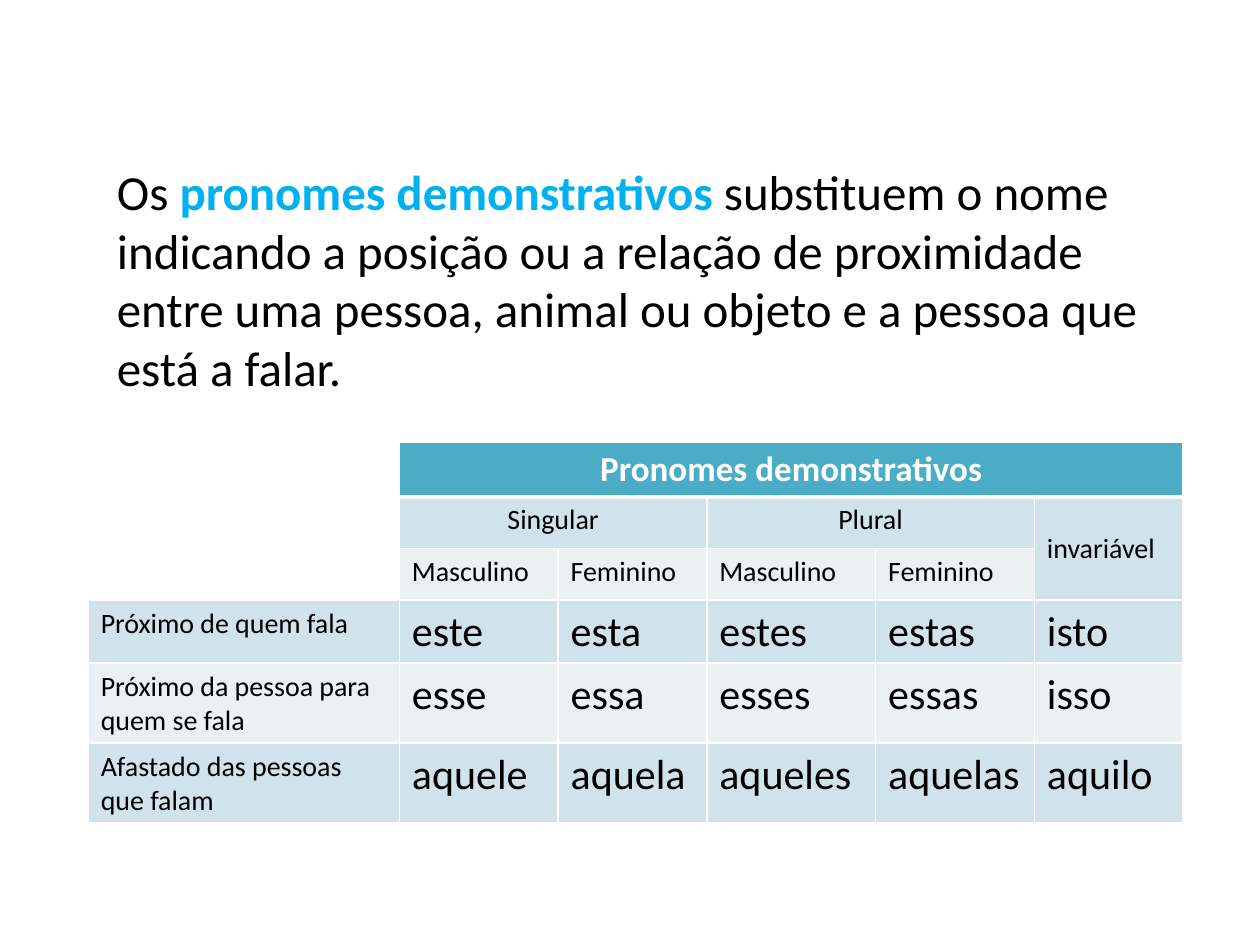
from pptx import Presentation
from pptx.dml.color import RGBColor
from pptx.enum import text
from pptx.oxml import parse_xml
from pptx.oxml import ns
from pptx.util import Inches, Pt

COLORS = {
    "ink": "000000",
    "accent": "00B0F0",
    "header": "4BACC6",
    "dark_band": "D0E3EA",
    "light_band": "E9F1F5",
    "white": "FFFFFF",
}
FONT = "Calibri"
COLUMN_WIDTHS = [2.47, 1.26, 1.18, 1.34, 1.26, 1.18]
ROW_HEIGHTS = [0.43, 0.41, 0.41, 0.5, 0.63, 0.63]
HEADINGS = [
    (0, 1, 0, 5, "Pronomes demonstrativos", "header",
     dict(size=20, color="white", bold=True, align="CENTER")),
    (1, 1, 1, 2, "Singular", "dark_band", dict(align="CENTER")),
    (1, 3, 1, 4, "Plural", "dark_band", dict(align="CENTER")),
    (1, 5, 2, 5, "invariável", "dark_band", {}),
]
GENDERS = ["Masculino", "Feminino"] * 2
PRONOUNS = [
    ("Próximo de quem fala", "este", "esta", "estes", "estas", "isto"),
    ("Próximo da pessoa para quem se fala", "esse", "essa", "esses", "essas", "isso"),
    ("Afastado das pessoas que falam", "aquele", "aquela", "aqueles", "aquelas", "aquilo"),
]


def add_text(para, words, size=16, color="ink", bold=False, align="LEFT"):
    """Append formatted words to a paragraph."""
    para.alignment = getattr(text.PP_ALIGN, align)
    span = para.add_run()
    span.text = words
    span.font.name = FONT
    span.font.size = Pt(size)
    span.font.bold = bold
    span.font.color.rgb = RGBColor.from_string(COLORS[color])


def set_borders(cell, bottom=1, top=1):
    """Draw white borders round a cell, with widths in points."""
    properties = cell._tc.get_or_add_tcPr()
    widths = {"lnL": 1, "lnR": 1, "lnT": top, "lnB": bottom}
    for position, (tag, width) in enumerate(widths.items()):
        properties.insert(position, parse_xml(
            f'<a:{tag} {ns.nsdecls("a")} w="{Pt(width)}"><a:solidFill>'
            f'<a:srgbClr val="{COLORS["white"]}"/></a:solidFill></a:{tag}>'))


def fill_cell(cell, words, fill, **style):
    """Write words in a cell over a solid fill."""
    cell.fill.solid()
    cell.fill.fore_color.rgb = RGBColor.from_string(COLORS[fill])
    add_text(cell.text_frame.paragraphs[0], words, **style)


def add_definition(page, left, top, width, height):
    """Place the definition of demonstrative pronouns."""
    box = page.shapes.add_textbox(left, top, width, height)
    box.text_frame.word_wrap = True
    para = box.text_frame.paragraphs[0]
    add_text(para, "Os ", size=28)
    add_text(para, "pronomes demonstrativos ", size=28, color="accent", bold=True)
    add_text(para, "substituem o nome indicando a posição ou a relação de "
             "proximidade entre uma pessoa, animal ou objeto e a pessoa que "
             "está a falar.", size=28)


def add_pronoun_table(page, left, top, width, height):
    """Place the table of pronouns by distance, number and gender."""
    frame = page.shapes.add_table(
        len(ROW_HEIGHTS), len(COLUMN_WIDTHS), left, top, width, height)
    table = frame.table
    table.first_row = table.horz_banding = False
    for column, share in zip(table.columns, COLUMN_WIDTHS):
        column.width = int(width * share / sum(COLUMN_WIDTHS))
    for row, share in zip(table.rows, ROW_HEIGHTS):
        row.height = int(height * share / sum(ROW_HEIGHTS))
    for index, row in enumerate(table.rows):
        for cell in row.cells:
            cell.fill.background()
            set_borders(cell, bottom=3 if index == 0 else 1,
                        top=3 if index == 1 else 1)
    for row, column, last_row, last_column, words, fill, style in HEADINGS:
        cell = table.cell(row, column)
        cell.merge(table.cell(last_row, last_column))
        fill_cell(cell, words, fill, **style)
    table.cell(1, 5).vertical_anchor = text.MSO_ANCHOR.MIDDLE
    for column, gender in enumerate(GENDERS, 1):
        fill_cell(table.cell(2, column), gender, "light_band")
    for row, entries in enumerate(PRONOUNS, 3):
        fill = "dark_band" if row % 2 else "light_band"
        for column, words in enumerate(entries):
            fill_cell(table.cell(row, column), words, fill,
                      size=24 if column else 16)


def main():
    """Build and save the deck."""
    deck = Presentation()
    deck.slide_width, deck.slide_height = Inches(10), Inches(7.5)
    page = deck.slides.add_slide(deck.slide_layouts[6])
    add_definition(page, Inches(0.83), Inches(1.23), Inches(8.43), Inches(1.99))
    add_pronoun_table(page, Inches(0.7), Inches(3.51), Inches(8.69), Inches(3.01))
    deck.save("out.pptx")


if __name__ == "__main__":
    main()
